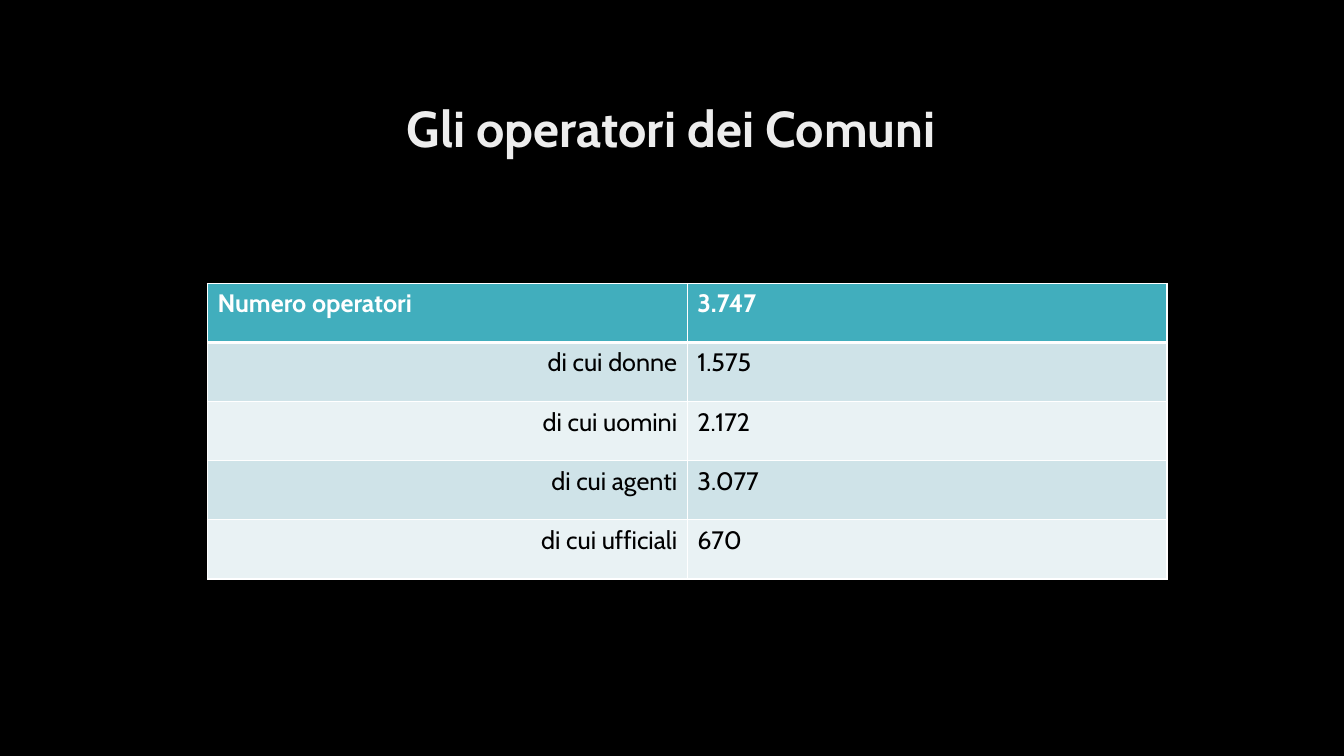
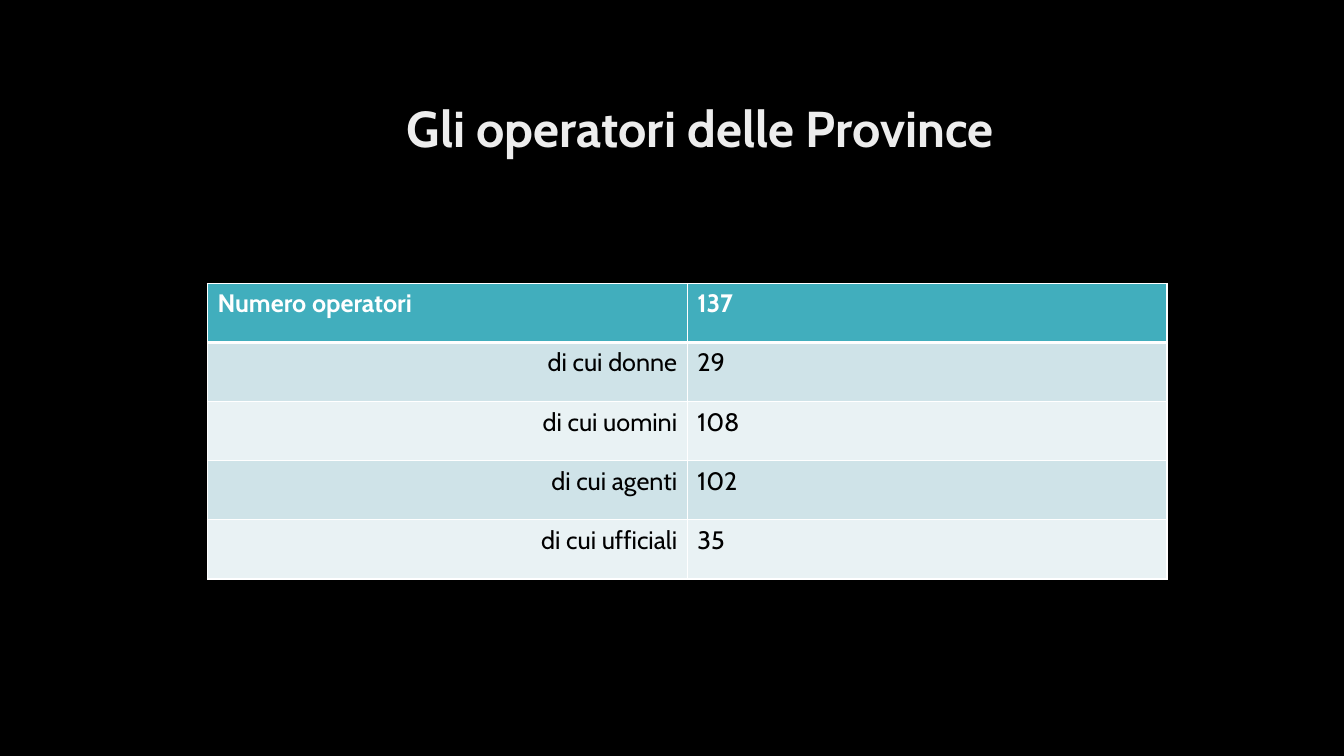
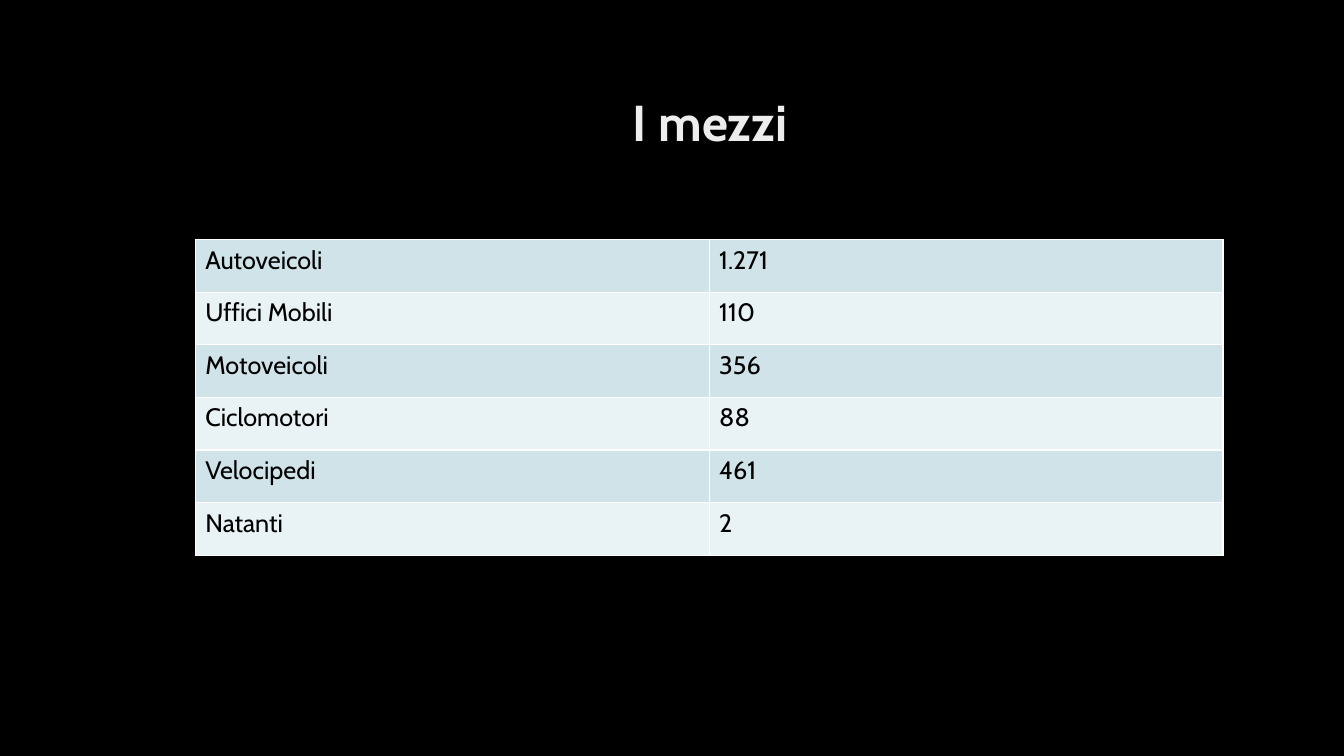
from pptx import Presentation
from pptx.util import Cm, Pt
from pptx.dml.color import RGBColor
from pptx.enum.text import PP_ALIGN as Align, MSO_ANCHOR as Anchor, MSO_AUTO_SIZE as Auto
from pptx.oxml import parse_xml
from pptx.oxml.ns import nsdecls

BLACK = RGBColor(0x00, 0x00, 0x00)
WHITE = RGBColor(0xFF, 0xFF, 0xFF)
SILVER = RGBColor(0xED, 0xED, 0xED)
TEAL = RGBColor(0x41, 0xAE, 0xBD)
BANDS = [RGBColor(0xCF, 0xE3, 0xE8), RGBColor(0xE9, 0xF2, 0xF4)]
FONT = "Cabin"

# Places in cm: left, top, width, height
STAFF = {"head": (10, 2.5, 16.92, 1.65), "grid": (5.23, 7.14, 24.18, 7.45)}
FLEET = {"head": (15, 2.34, 5.8, 1.65), "grid": (4.92, 6.04, 25.9, 7.95)}
ROLES = ["Numero operatori", "di cui donne", "di cui uomini",
         "di cui agenti", "di cui ufficiali"]
KINDS = ["Autoveicoli", "Uffici Mobili", "Motoveicoli",
         "Ciclomotori", "Velocipedi", "Natanti"]

# Title, places, labels, values, whether the first row is a header
PAGES = [
    ("Gli operatori dei Comuni", STAFF, ROLES,
     ["3.747", "1.575", "2.172", "3.077", "670"], True),
    ("Gli operatori delle Province", STAFF, ROLES,
     ["137", "29", "108", "102", "35"], True),
    ("I mezzi", FLEET, KINDS,
     ["1.271", "110", "356", "88", "461", "2"], False),
]


def style(par, size, color, bold, align):
    par.alignment = align
    font = par.font
    font.name, font.size, font.bold = FONT, Pt(size), bold
    font.color.rgb = color


def edge(cell, side, width):
    cell._tc.get_or_add_tcPr().append(parse_xml(
        f'<a:ln{side} {nsdecls("a")} w="{Pt(width)}"><a:solidFill>'
        f'<a:srgbClr val="{WHITE}"/></a:solidFill></a:ln{side}>'))


deck = Presentation()
deck.slide_width, deck.slide_height = Cm(33.87), Cm(19.05)

# Shared black background
back = deck.slide_master.background.fill
back.solid()
back.fore_color.rgb = BLACK

for name, place, labels, values, header in PAGES:
    slide = deck.slides.add_slide(deck.slide_layouts[5])

    # Title
    title = slide.shapes.title
    title.left, title.top, title.width, title.height = map(Cm, place["head"])
    frame = title.text_frame
    frame.text = name
    frame.word_wrap = True
    frame.auto_size = Auto.SHAPE_TO_FIT_TEXT
    frame.vertical_anchor = Anchor.TOP
    par = frame.paragraphs[0]
    par.line_spacing = 0.9
    par.space_after = Pt(6)
    style(par, 36, SILVER, True, Align.LEFT if header else Align.CENTER)

    # Table
    table = slide.shapes.add_table(len(labels), 2, *map(Cm, place["grid"])).table
    table.first_row = header
    for r, row in enumerate(zip(labels, values)):
        top = header and r == 0
        for c, text in enumerate(row):
            cell = table.cell(r, c)
            edge(cell, "L", 1)
            edge(cell, "R", 1)
            if r == 0:
                edge(cell, "T", 1)
            edge(cell, "B", 3 if top else 1)
            cell.fill.solid()
            cell.fill.fore_color.rgb = TEAL if top else BANDS[(r - header) % 2]
            cell.text = text
            right = header and r > 0 and c == 0
            style(cell.text_frame.paragraphs[0], 18, WHITE if top else BLACK,
                  top, Align.RIGHT if right else Align.LEFT)

deck.save("out.pptx")
